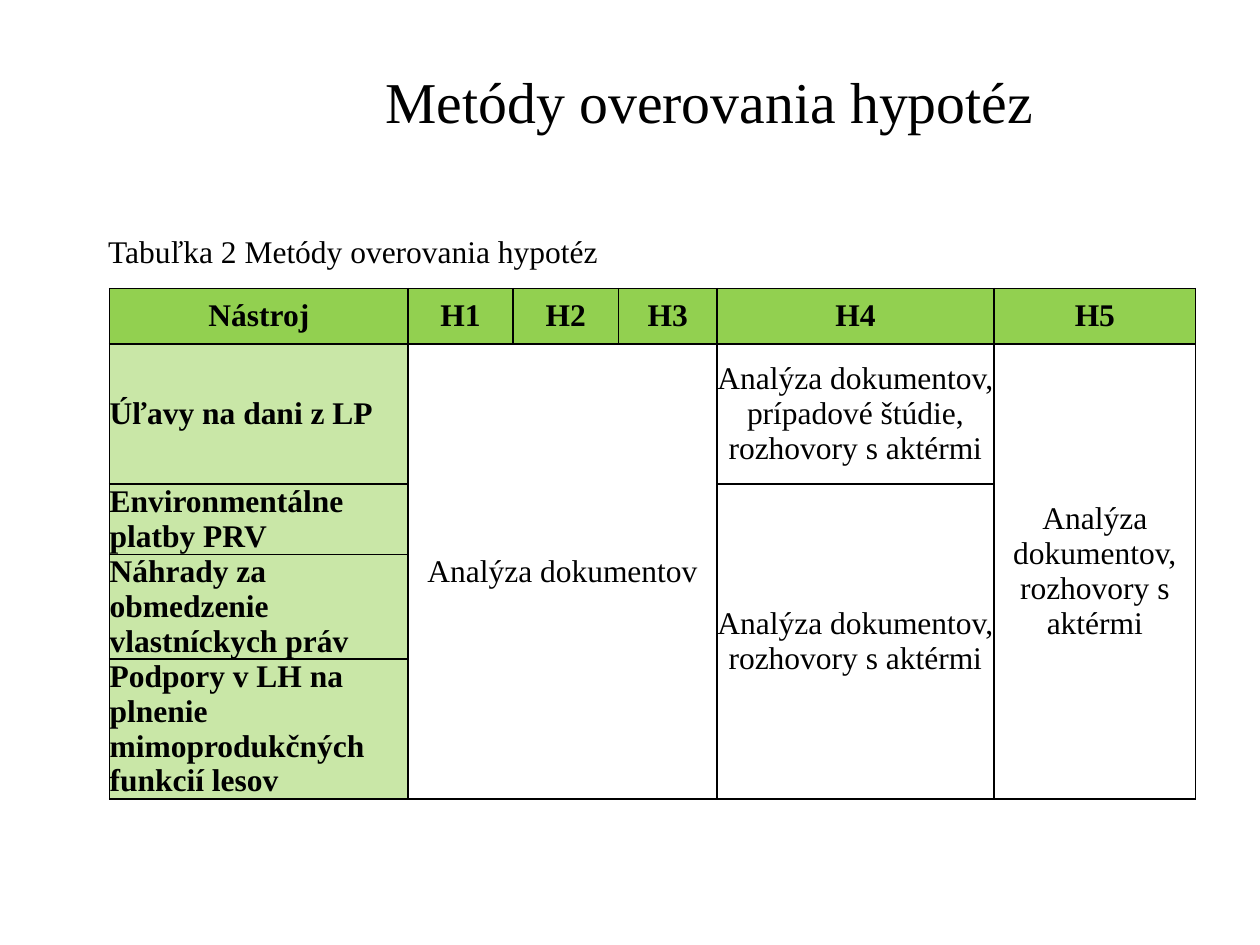
from dataclasses import dataclass

from lxml.etree import SubElement
from pptx import Presentation
from pptx.dml.color import RGBColor
from pptx.enum.text import MSO_ANCHOR as Anchor, MSO_AUTO_SIZE as AutoSize, PP_ALIGN as Align
from pptx.oxml.ns import qn
from pptx.util import Inches, Pt

FONT = "Times New Roman"
COLORS = {"ink": "000000", "header": "92D050", "instrument": "C9E7A7"}
COLUMN_WIDTHS = (2.37, 0.83, 0.84, 0.78, 2.2, 1.6)
ROW_HEIGHTS = (0.44, 1.11, 0.56, 0.83, 1.11)
HEADINGS = ("Nástroj", "H1", "H2", "H3", "H4", "H5")
INSTRUMENTS = (
    "Úľavy na dani z LP",
    "Environmentálne platby PRV",
    "Náhrady za obmedzenie vlastníckych práv",
    "Podpory v LH na plnenie mimoprodukčných funkcií lesov",
)
INTERVIEWS = "Analýza dokumentov, rozhovory s aktérmi"


@dataclass(frozen=True)
class Entry:
    row: int
    column: int
    text: str
    fill: str = ""
    bold: bool = False
    align: Align = Align.CENTER
    rows: int = 1
    columns: int = 1


ENTRIES = (
    *(Entry(0, column, text, "header", True) for column, text in enumerate(HEADINGS)),
    *(Entry(row, 0, text, "instrument", True, Align.LEFT)
      for row, text in enumerate(INSTRUMENTS, 1)),
    Entry(1, 1, "Analýza dokumentov", rows=4, columns=3),
    Entry(1, 4, "Analýza dokumentov, prípadové štúdie, rozhovory s aktérmi"),
    Entry(1, 5, INTERVIEWS, rows=4),
    Entry(2, 4, INTERVIEWS, rows=3),
)


def write(paragraph, text: str, size: float, align: Align, bold: bool = False) -> None:
    """Add one formatted run to a paragraph."""
    paragraph.alignment = align
    run = paragraph.add_run()
    run.text = text
    run.font.name = FONT
    run.font.size = Pt(size)
    run.font.bold = bold
    run.font.color.rgb = RGBColor.from_string(COLORS["ink"])


def add_borders(cell) -> None:
    """Outline a cell with thin solid lines."""
    properties = cell._tc.get_or_add_tcPr()
    for side in ("a:lnL", "a:lnR", "a:lnT", "a:lnB"):
        line = SubElement(properties, qn(side), w=str(Pt(1)))
        fill = SubElement(line, qn("a:solidFill"))
        SubElement(fill, qn("a:srgbClr"), val=COLORS["ink"])


def fill_entry(table, entry: Entry) -> None:
    """Merge, fill and label the cell of one entry."""
    cell = table.cell(entry.row, entry.column)
    if entry.rows * entry.columns > 1:
        cell.merge(table.cell(entry.row + entry.rows - 1, entry.column + entry.columns - 1))
    if entry.fill:
        cell.fill.solid()
        cell.fill.fore_color.rgb = RGBColor.from_string(COLORS[entry.fill])
    write(cell.text_frame.paragraphs[0], entry.text, 18, entry.align, entry.bold)


def add_methods_table(slide) -> None:
    """Draw the table of methods by instrument and hypothesis."""
    table = slide.shapes.add_table(
        len(ROW_HEIGHTS), len(COLUMN_WIDTHS), Inches(0.87), Inches(2.29),
        Inches(sum(COLUMN_WIDTHS)), Inches(sum(ROW_HEIGHTS))).table
    table.first_row = table.horz_banding = False
    for column, width in zip(table.columns, COLUMN_WIDTHS):
        column.width = Inches(width)
    for row, height in zip(table.rows, ROW_HEIGHTS):
        row.height = Inches(height)
    for cell in table.iter_cells():
        cell.margin_left = cell.margin_right = cell.margin_top = cell.margin_bottom = 0
        cell.vertical_anchor = Anchor.MIDDLE
        add_borders(cell)
        cell.fill.background()
    for entry in ENTRIES:
        fill_entry(table, entry)


def add_title(slide, text: str) -> None:
    """Place and write the slide title."""
    title = slide.shapes.title
    title.left, title.top, title.width, title.height = map(Inches, (1.13, 0.42, 9, 0.94))
    frame = title.text_frame
    frame.word_wrap = True
    frame.auto_size = AutoSize.NONE
    frame.vertical_anchor = Anchor.TOP
    frame.margin_top = Inches(0.1)
    write(frame.paragraphs[0], text, 33, Align.CENTER)


def add_caption(slide, text: str) -> None:
    """Write the indented table caption."""
    frame = slide.shapes.add_textbox(*map(Inches, (0.27, 1.79, 6.15, 0.4))).text_frame
    frame.word_wrap = True
    frame.auto_size = AutoSize.SHAPE_TO_FIT_TEXT
    caption = frame.paragraphs[0]
    caption._p.get_or_add_pPr().set("indent", str(Inches(0.49)))
    caption.space_after = Pt(6)
    write(caption, text, 18, Align.JUSTIFY)


def main() -> None:
    """Build and save the slide."""
    deck = Presentation()
    deck.slide_width, deck.slide_height = Inches(10), Inches(7.5)
    slide = deck.slides.add_slide(deck.slide_layouts[5])
    add_title(slide, "Metódy overovania hypotéz")
    add_methods_table(slide)
    add_caption(slide, "Tabuľka 2 Metódy overovania hypotéz")
    deck.save("out.pptx")


if __name__ == "__main__":
    main()
